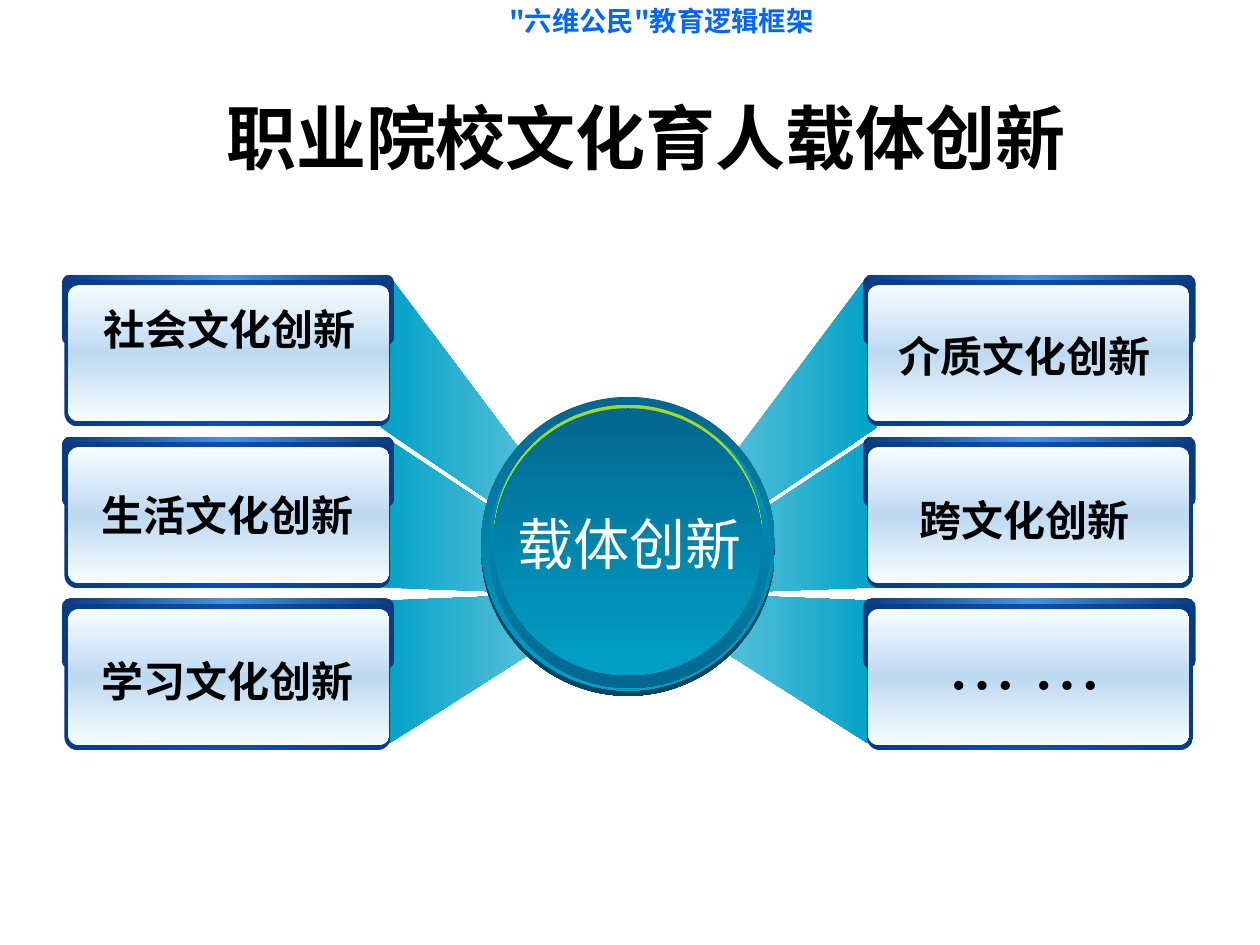
from dataclasses import dataclass

from lxml.etree import SubElement
from pptx import Presentation
from pptx.dml.color import RGBColor
from pptx.enum.shapes import MSO_SHAPE
from pptx.enum.text import MSO_ANCHOR, MSO_AUTO_SIZE, PP_ALIGN
from pptx.oxml.ns import qn
from pptx.util import Pt


@dataclass(frozen=True)
class Theme:
    font: str = "Noto Sans CJK SC"
    header_color: str = "0066FF"
    black: str = "000000"
    white: str = "FFFFFF"
    header_size: float = 15.6
    title_size: float = 40
    label_size: float = 24
    hub_size: float = 32
    fan: tuple = ("8ED5E6", "00A0C6")
    card_tab: tuple = ("093B82", "4694DA", "093B82")
    card_frame: tuple = ("093B82", "0C4EB0", "093B82")
    card_face: tuple = ("F7FDFF", "BED9F2", "F7FDFF")
    hub: tuple = ("03678F", "00A0C6")
    hub_shade: str = "024560"
    hub_glow: str = "9CDB2C"


THEME = Theme()
MIRROR_WIDTH = 718.56  # left and right halves add up to this width
ROW_PITCH = 92.5

# Card layers: left, top, width, height, corner, colours, angle
CARD_LAYERS = [
    (35.3, 157, 190, 40.3, 0.117, THEME.card_tab, 0),
    (36.8, 160, 186.5, 83.5, 0.087, THEME.card_frame, 0),
    (39, 163, 183.5, 77.8, 0.077, THEME.card_face, 90),
]
FANS = [
    [(223.2, 158.4), (359.3, 339.8), (217.4, 244.1)],
    [(223.2, 252), (357.1, 340.6), (214.6, 335.5)],
    [(222.5, 424.8), (359.3, 337.7), (216.7, 343.4)],
]
# Hub discs: left, top, width, height, colours, shadow (colour, distance, angle)
HUB_DISCS = [
    (275, 226.8, 167.8, 167.8, THEME.hub, (THEME.hub_shade, 3, 90)),
    (279.4, 232.6, 160.6, 160.6, THEME.hub[::-1], None),
    (282.2, 233.3, 153.4, 152.6, THEME.hub, (THEME.hub_glow, 2, 270)),
]
# Labels: text, left, top, width, height, format differences
LABELS = [
    ("社会文化创新", 45.4, 169.9, 171.4, 36, {"anchor": MSO_ANCHOR.TOP}),
    ("生活文化创新", 45.4, 262.8, 169.2, 62.6, {}),
    ("学习文化创新", 45.4, 355, 169.2, 62.6, {"spacing": 1.2}),
    ("介质文化创新", 500.4, 169.2, 170.6, 62.6, {"spacing": 1.2}),
    ("跨文化创新", 500.4, 262.8, 170.6, 62.6, {"spacing": 1.2}),
    ("… …", 500.4, 355, 170.6, 62.6,
     {"spacing": 1.2, "size": THEME.title_size, "bold": False}),
]


def add_outer_shadow(effects, color, distance, angle):
    shadow = SubElement(effects, qn("a:outerShdw"), dist=str(Pt(distance)),
                        dir=str(angle * 60000), algn="ctr", rotWithShape="0")
    SubElement(shadow, qn("a:srgbClr"), val=color)


def paint_shape(shape, colors, angle, shadow=None):
    """Apply an evenly stepped gradient, no outline and an optional shadow."""
    shape.line.fill.background()
    shape.shadow.inherit = False
    shape.fill.gradient()
    shape.fill.gradient_angle = (360 - angle) % 360
    properties = shape._element.spPr
    stops = properties.find(".//" + qn("a:gsLst"))
    for stop in list(stops):
        stops.remove(stop)
    for index, color in enumerate(colors):
        position = index * 100000 // (len(colors) - 1)
        stop = SubElement(stops, qn("a:gs"), pos=str(position))
        SubElement(stop, qn("a:srgbClr"), val=color)
    if shadow:
        add_outer_shadow(properties.find(qn("a:effectLst")), *shadow)


def write_text(shape, text, size=THEME.label_size, color=THEME.black, bold=True,
               anchor=MSO_ANCHOR.MIDDLE, spacing=1.0, frame_format=None):
    frame = shape.text_frame
    frame_values = {"word_wrap": True, "auto_size": MSO_AUTO_SIZE.NONE,
                    "vertical_anchor": anchor, **(frame_format or {})}
    for name, value in frame_values.items():
        setattr(frame, name, value)
    paragraph = frame.paragraphs[0]
    paragraph.alignment = PP_ALIGN.CENTER
    paragraph.line_spacing = spacing
    run = paragraph.add_run()
    run.text = text
    run.font.color.rgb = RGBColor.from_string(color)
    font_values = {"name": THEME.font, "size": Pt(size), "bold": bold}
    for name, value in font_values.items():
        setattr(run.font, name, value)
    SubElement(run._r.rPr, qn("a:ea"), typeface=THEME.font)
    return run


def add_text(slide, text, left, top, width, height, **text_format):
    shape = slide.shapes.add_textbox(Pt(left), Pt(top), Pt(width), Pt(height))
    return write_text(shape, text, **text_format)


def add_title(slide, text):
    title = slide.shapes.title
    box = {"left": 49.7, "top": 28.8, "width": 620.6, "height": 104.4}
    for name, value in box.items():
        setattr(title, name, Pt(value))
    # The wider left inset sets the title a little right of centre
    write_text(title, text, size=THEME.title_size, spacing=0.9,
               frame_format={"margin_left": Pt(25.2)})


def add_fan(slide, points, mirrored):
    if mirrored:
        points = [(MIRROR_WIDTH - x, y) for x, y in points]
    corners = [(Pt(x), Pt(y)) for x, y in points]
    builder = slide.shapes.build_freeform(*corners[0])
    builder.add_line_segments(corners[1:], close=True)
    colors = THEME.fan if mirrored else THEME.fan[::-1]
    paint_shape(builder.convert_to_shape(), colors, 0)


def add_card(slide, row, mirrored):
    for left, top, width, height, corner, colors, angle in CARD_LAYERS:
        if mirrored:
            left = MIRROR_WIDTH - left - width
        shape = slide.shapes.add_shape(
            MSO_SHAPE.ROUNDED_RECTANGLE, Pt(left), Pt(top + row * ROW_PITCH),
            Pt(width), Pt(height))
        shape.adjustments[0] = corner
        paint_shape(shape, colors, angle)


def add_hub(slide):
    for left, top, width, height, colors, shadow in HUB_DISCS:
        disc = slide.shapes.add_shape(
            MSO_SHAPE.OVAL, Pt(left), Pt(top), Pt(width), Pt(height))
        paint_shape(disc, colors, 90, shadow)


def add_hub_label(slide, text):
    run = add_text(slide, text, 275.8, 232.6, 167.8, 155.5,
                   size=THEME.hub_size, color=THEME.white, bold=False)
    latin = run._r.rPr.find(qn("a:latin"))
    effects = SubElement(run._r.rPr, qn("a:effectLst"))
    latin.addprevious(effects)
    add_outer_shadow(effects, THEME.black, 2, 45)


def main():
    presentation = Presentation()
    presentation.slide_width, presentation.slide_height = Pt(720), Pt(540)
    slide = presentation.slides.add_slide(presentation.slide_layouts[5])

    # Header and title
    add_text(slide, '"六维公民"教育逻辑框架', 72, 1.4, 612, 23.8, spacing=0.8,
             size=THEME.header_size, color=THEME.header_color)
    add_title(slide, "职业院校文化育人载体创新")

    # Fans and cards on both sides
    for mirrored in (False, True):
        for points in FANS:
            add_fan(slide, points, mirrored)
        for row in range(3):
            add_card(slide, row, mirrored)

    # Central hub and all labels
    add_hub(slide)
    for text, left, top, width, height, text_format in LABELS:
        add_text(slide, text, left, top, width, height, **text_format)
    add_hub_label(slide, "载体创新")

    presentation.save("out.pptx")


if __name__ == "__main__":
    main()
